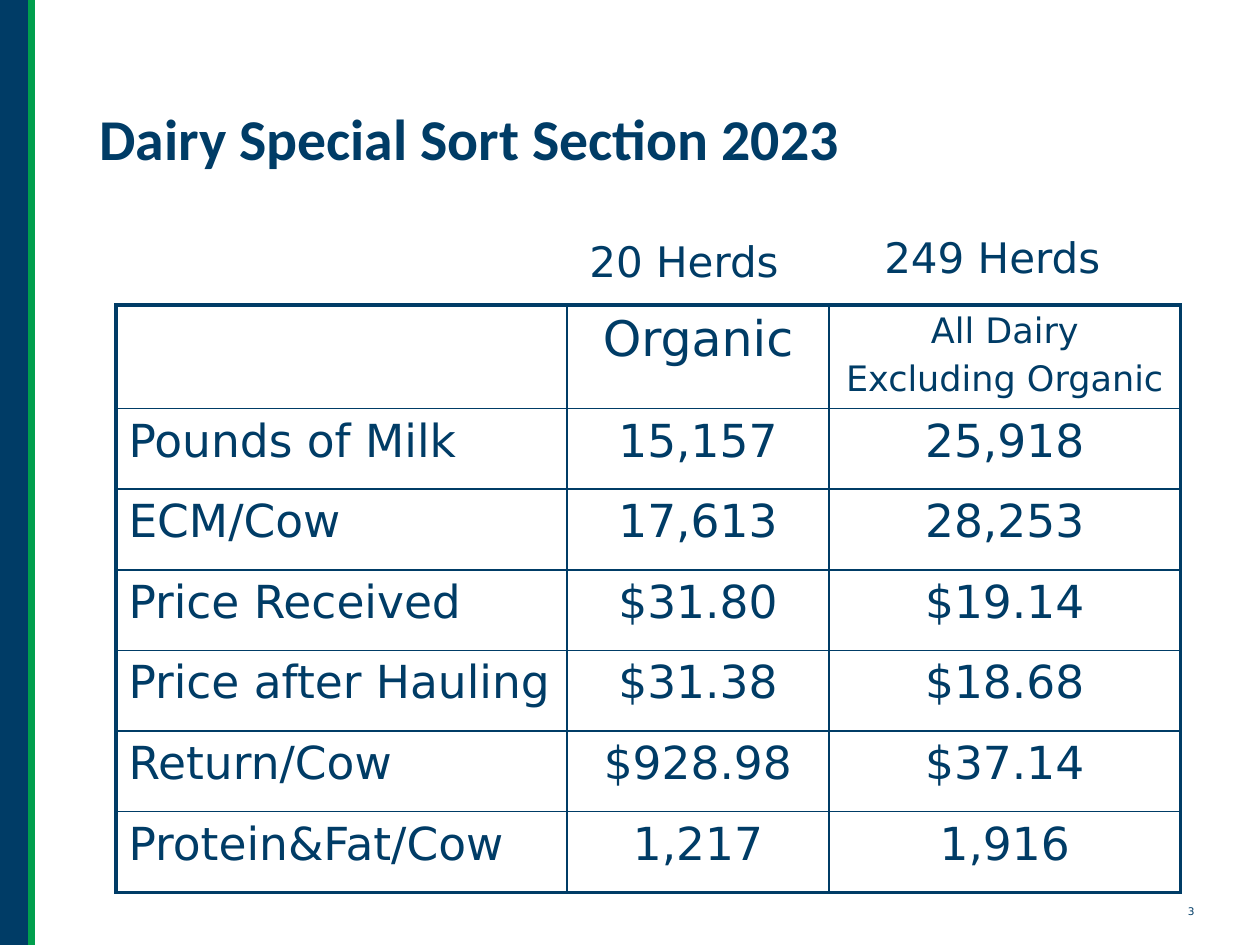
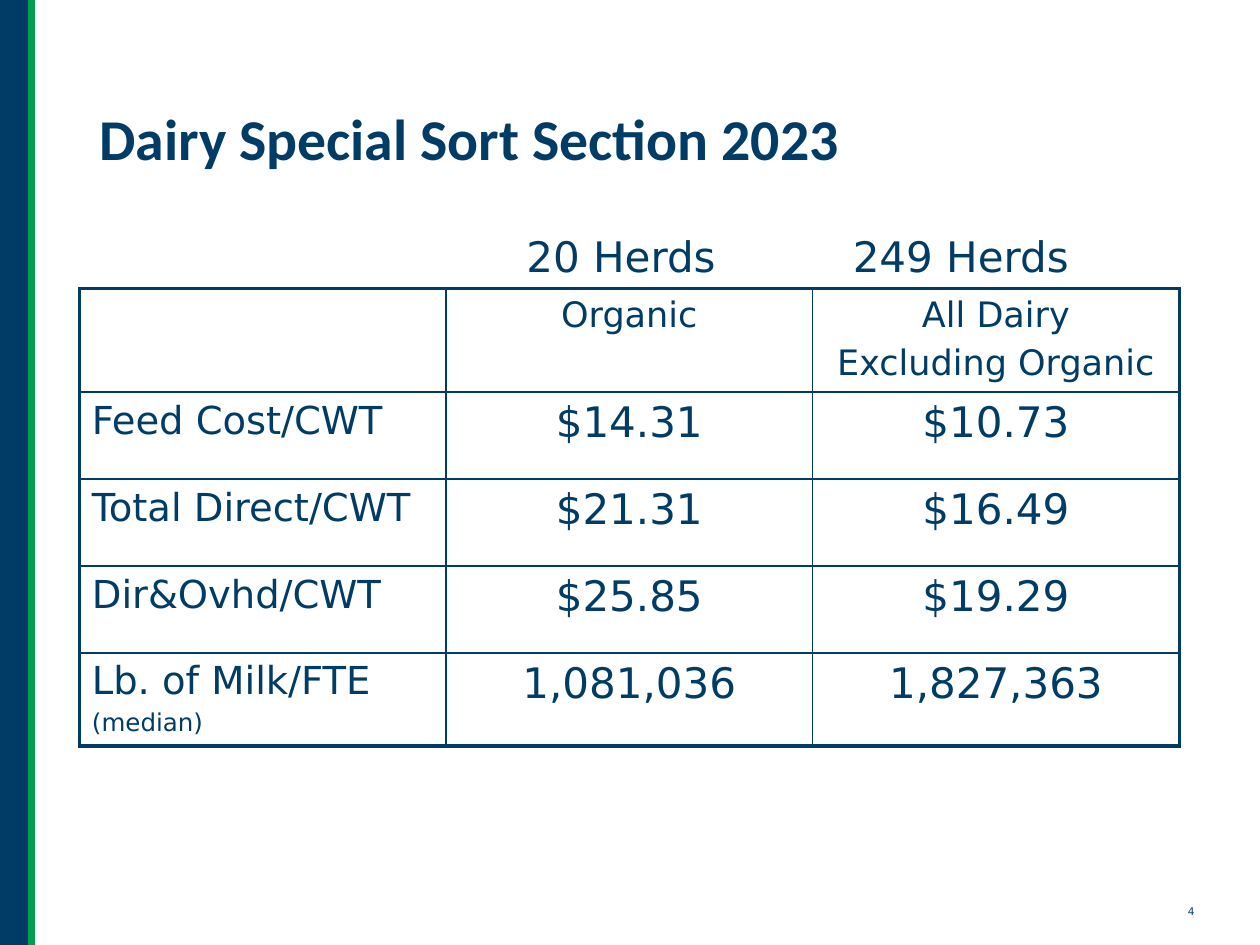
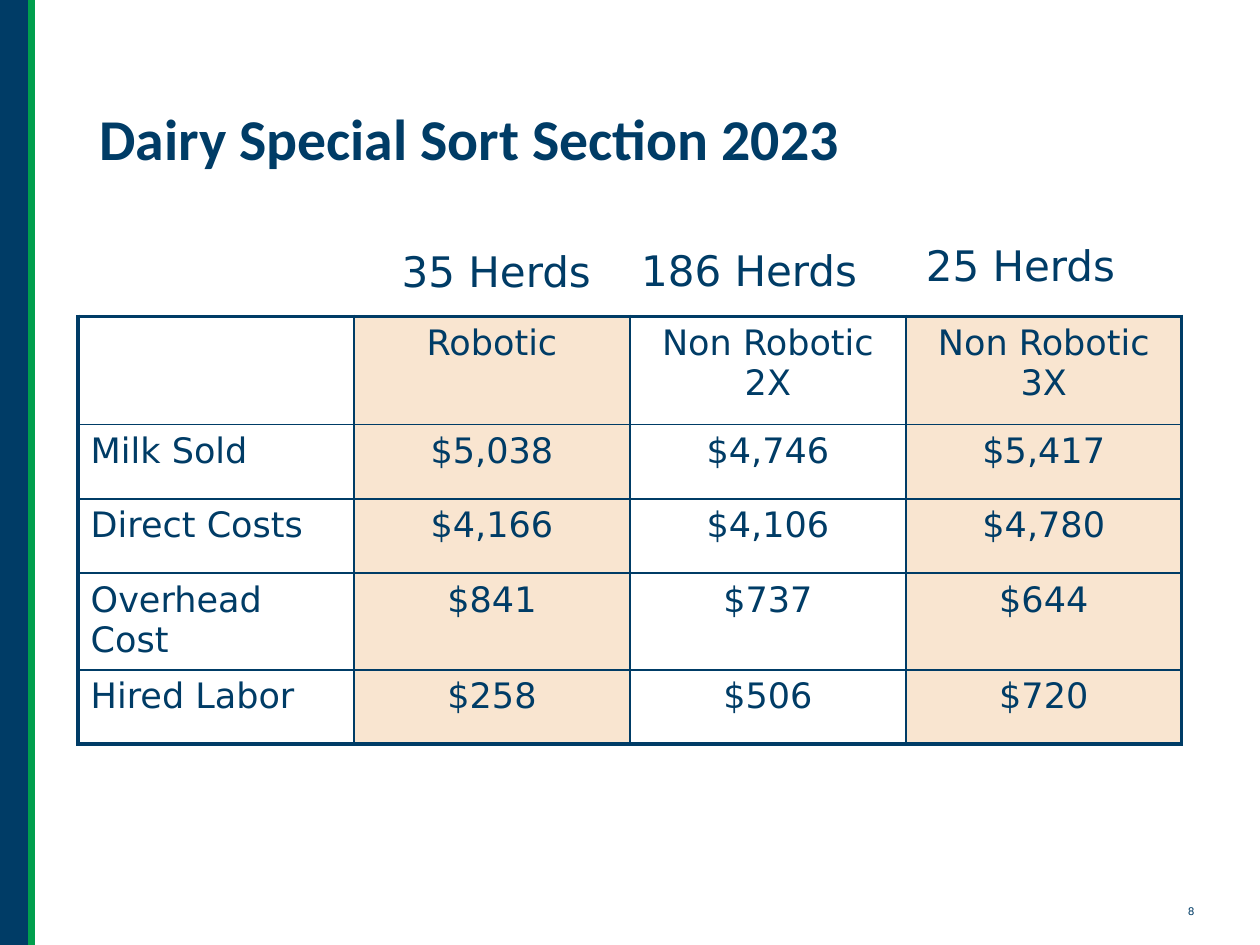
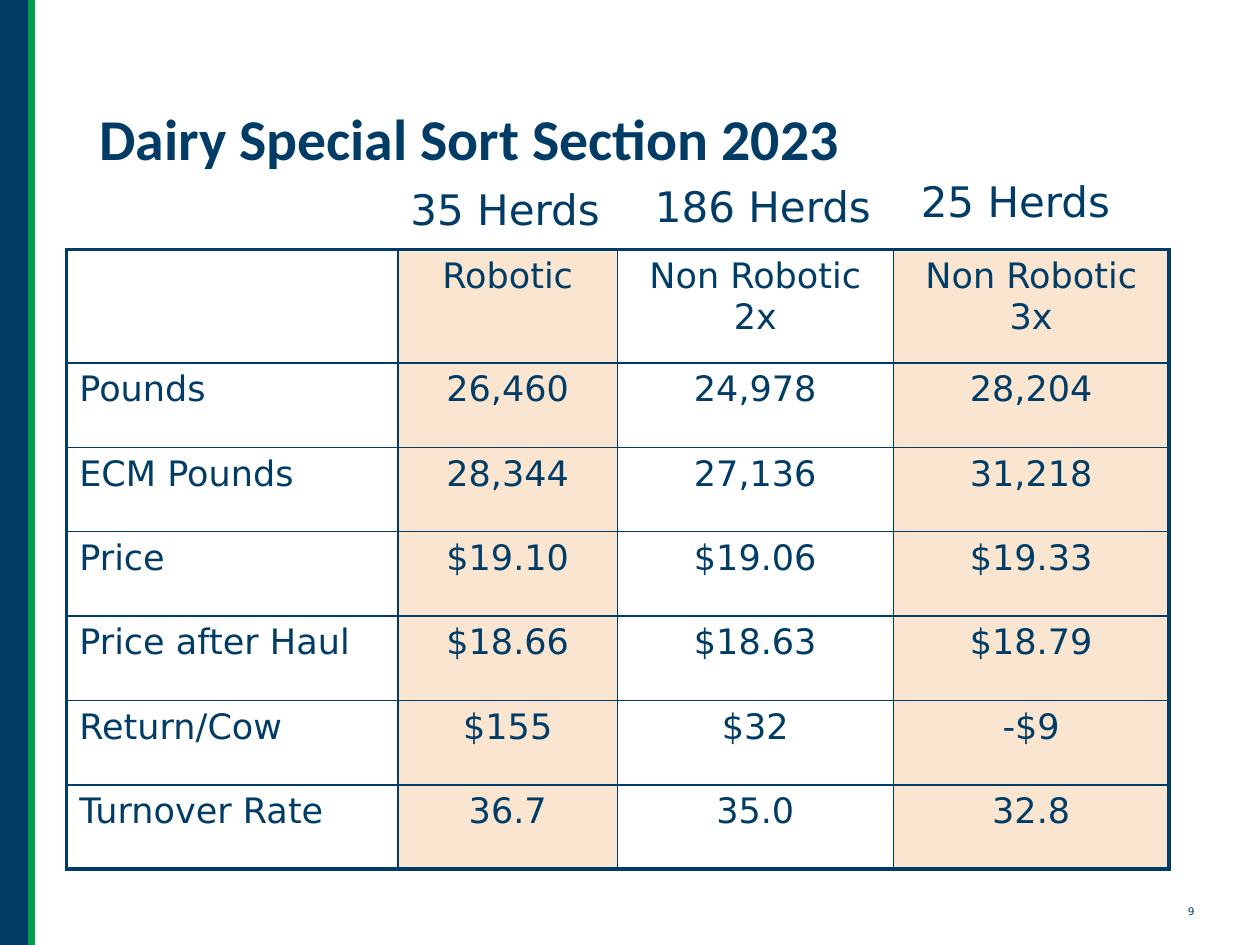
import pptx
import pptx.util
import pptx.dml.color
import pptx.enum.shapes
import pptx.enum.text
import pptx.oxml
import pptx.oxml.ns
import lxml.etree

Inches = pptx.util.Inches
Pt = pptx.util.Pt
RGB = pptx.dml.color.RGBColor.from_string
colors = {"navy": "003C66", "green": "009F4D", "peach": "F9E5D0"}
body = "DejaVu Sans"
heading = "Dairy Special Sort Section 2023"

pages = [
    {
        "number": "3", "left": 0.92, "top": 2.42,
        "widths": [3.58, 2.08, 2.79], "head": 0.77, "row": 0.64,
        "heads": [0, 28, 20], "label": 26, "value": 26, "shade": False,
        "herds": [("20 Herds", 4.58, 1.82), ("249 Herds", 6.92, 1.79)],
        "rows": [
            ["", "Organic", "All Dairy\nExcluding Organic"],
            ["Pounds of Milk", "15,157", "25,918"],
            ["ECM/Cow", "17,613", "28,253"],
            ["Price Received", "$31.80", "$19.14"],
            ["Price after Hauling", "$31.38", "$18.68"],
            ["Return/Cow", "$928.98", "$37.14"],
            ["Protein&Fat/Cow", "1,217", "1,916"],
        ],
    },
    {
        "number": "4", "left": 0.63, "top": 2.29,
        "widths": [2.91] * 3, "head": 0.8, "row": 0.69,
        "heads": [0, 20, 20], "label": 22, "value": 24, "shade": False,
        "herds": [("20 Herds", 4.08, 1.78), ("249 Herds", 6.67, 1.78)],
        "rows": [
            ["", "Organic", "All Dairy\nExcluding Organic"],
            ["Feed Cost/CWT", "$14.31", "$10.73"],
            ["Total Direct/CWT", "$21.31", "$16.49"],
            ["Dir&Ovhd/CWT", "$25.85", "$19.29"],
            ["Lb. of Milk/FTE\n(median)", "1,081,036", "1,827,363"],
        ],
    },
    {
        "number": "8", "left": 0.62, "top": 2.51,
        "widths": [2.19] * 4, "head": 0.86, "row": 0.59,
        "heads": [0, 20, 20, 20], "label": 20, "value": 20, "shade": True,
        "herds": [("35 Herds", 3.09, 1.9), ("186 Herds", 4.99, 1.89),
                  ("25 Herds", 7.25, 1.85)],
        "rows": [
            ["", "Robotic", "Non Robotic 2X", "Non Robotic 3X"],
            ["Milk Sold", "$5,038", "$4,746", "$5,417"],
            ["Direct Costs", "$4,166", "$4,106", "$4,780"],
            ["Overhead Cost", "$841", "$737", "$644"],
            ["Hired Labor", "$258", "$506", "$720"],
        ],
    },
    {
        "number": "9", "left": 0.53, "top": 1.98,
        "widths": [2.63, 1.74, 2.19, 2.19], "head": 0.9, "row": 0.67,
        "heads": [0, 20, 20, 20], "label": 20, "value": 20, "shade": True,
        "herds": [("35 Herds", 3.16, 1.41), ("186 Herds", 5.1, 1.38),
                  ("25 Herds", 7.21, 1.34)],
        "rows": [
            ["", "Robotic", "Non Robotic 2x", "Non Robotic 3x"],
            ["Pounds", "26,460", "24,978", "28,204"],
            ["ECM Pounds", "28,344", "27,136", "31,218"],
            ["Price", "$19.10", "$19.06", "$19.33"],
            ["Price after Haul", "$18.66", "$18.63", "$18.79"],
            ["Return/Cow", "$155", "$32", "-$9"],
            ["Turnover Rate", "36.7", "35.0", "32.8"],
        ],
    },
]


def add_text(slide, text, left, top, width, height, size, font=body):
    box = slide.shapes.add_textbox(
        Inches(left), Inches(top), Inches(width), Inches(height))
    box.text_frame.word_wrap = True
    para = box.text_frame.paragraphs[0]
    para.text = text
    para.font.size = Pt(size)
    para.font.name = font
    para.font.color.rgb = RGB(colors["navy"])
    return box.text_frame


def set_edges(cell, edges):
    props = cell._tc.get_or_add_tcPr()
    for spot, (side, width) in enumerate(edges.items()):
        props.insert(spot, pptx.oxml.parse_xml(
            f'<a:ln{side} {pptx.oxml.ns.nsdecls("a")} w="{Pt(width)}">'
            f'<a:solidFill><a:srgbClr val="{colors["navy"]}"/></a:solidFill>'
            f'</a:ln{side}>'))


deck = pptx.Presentation()
deck.slide_width = Inches(10)
deck.slide_height = Inches(7.5)

for page in pages:
    slide = deck.slides.add_slide(deck.slide_layouts[6])
    add_text(slide, page["number"], 9.33, 7.13, 0.35, 0.2, 6)

    band = slide.shapes.add_shape(
        pptx.enum.shapes.MSO_SHAPE.RECTANGLE, 0, 0, Inches(0.25), Inches(7.5))
    band.shadow.inherit = False
    band.fill.solid()
    band.fill.fore_color.rgb = RGB(colors["navy"])
    band.line.fill.background()

    stripe = slide.shapes.add_connector(
        pptx.enum.shapes.MSO_CONNECTOR.STRAIGHT,
        Inches(0.25), 0, Inches(0.25), Inches(7.5))
    stripe.line.color.rgb = RGB(colors["green"])
    stripe.line.width = Pt(4.5)
    lxml.etree.SubElement(
        stripe._element.spPr, pptx.oxml.ns.qn("a:effectLst"))

    title = add_text(slide, heading, 0.69, 0.4, 8.62, 1.45, 33, "Calibri")
    title.vertical_anchor = pptx.enum.text.MSO_ANCHOR.MIDDLE
    title.paragraphs[0].font.bold = True
    title.paragraphs[0].line_spacing = 0.9

    rows, widths = page["rows"], page["widths"]
    heights = [page["head"]] + [page["row"]] * (len(rows) - 1)
    table = slide.shapes.add_table(
        len(rows), len(widths), Inches(page["left"]), Inches(page["top"]),
        Inches(sum(widths)), Inches(sum(heights))).table
    table.first_row = False
    table.horz_banding = False
    for col, width in zip(table.columns, widths):
        col.width = Inches(width)
    for row, height in zip(table.rows, heights):
        row.height = Inches(height)

    for r, row in enumerate(rows):
        for c, text in enumerate(row):
            cell = table.cell(r, c)
            if page["shade"] and c % 2:
                cell.fill.solid()
                cell.fill.fore_color.rgb = RGB(colors["peach"])
            else:
                cell.fill.background()
            set_edges(cell, {
                "L": 2.25 if c == 0 else 1,
                "R": 2.25 if c == len(widths) - 1 else 1,
                "T": 2.25 if r == 0 else 1,
                "B": 2.25 if r == len(rows) - 1 else 1,
            })
            if not text:
                continue
            cell.text = text
            if r == 0:
                size = page["heads"][c]
            else:
                size = page["value"] if c else page["label"]
            for n, para in enumerate(cell.text_frame.paragraphs):
                if para.text == "(median)":
                    size = 14
                if n:
                    para.space_before = Pt(0.2 * size)
                if c:
                    para.alignment = pptx.enum.text.PP_ALIGN.CENTER
                para.font.size = Pt(size)
                para.font.name = body
                para.font.color.rgb = RGB(colors["navy"])

    for text, left, top in page["herds"]:
        width = 1.73 if len(text) == 8 else 1.94
        herd = add_text(slide, text, left, top, width, 0.5, 24)
        herd.word_wrap = False

deck.save("out.pptx")
